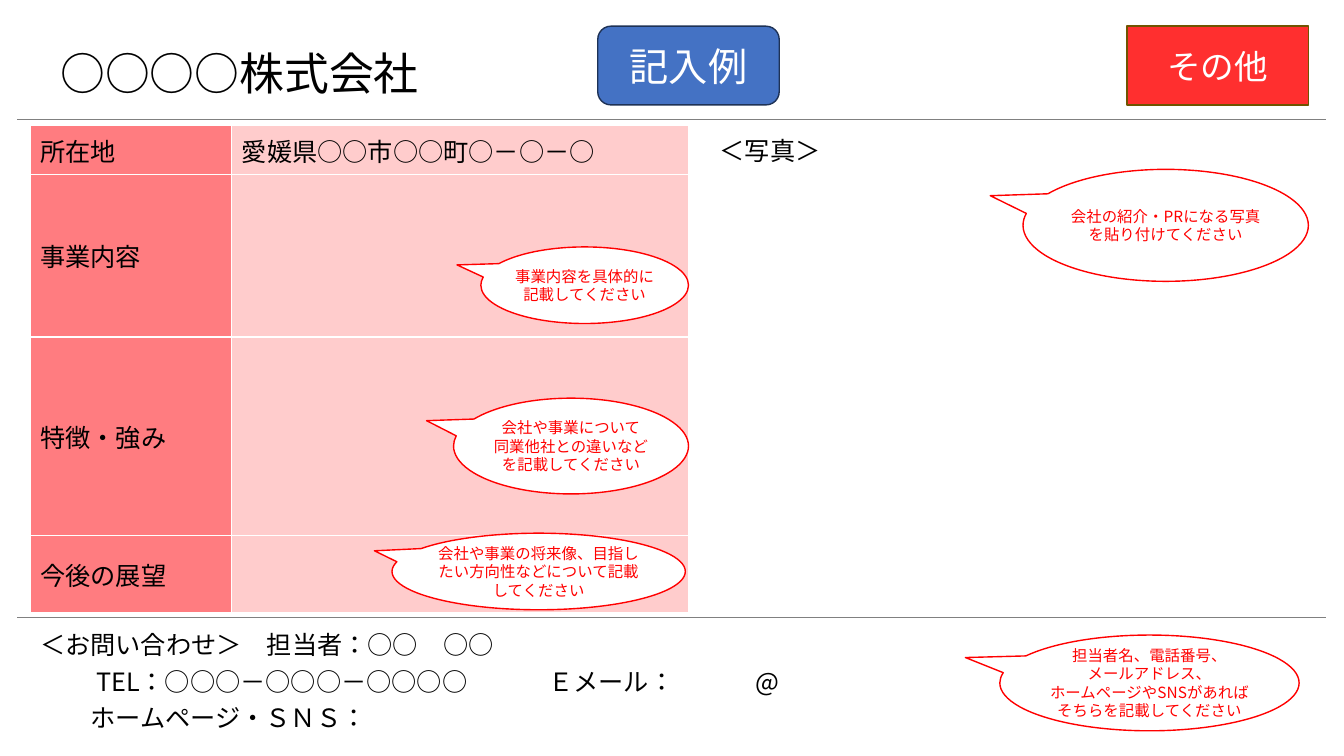
import pptx
import pptx.dml.color
import pptx.enum.lang
import pptx.enum.shapes
import pptx.enum.text
import pptx.oxml.ns
import pptx.util
from lxml import etree

Pt = pptx.util.Pt
SHAPE = pptx.enum.shapes.MSO_SHAPE
ALIGN = pptx.enum.text.PP_ALIGN
ANCHOR = pptx.enum.text.MSO_ANCHOR

# Content: frames are left, top, width, height in points
TITLE = ["○○○○株式会社"]
PHOTO = ["＜写真＞"]
CONTACT = [
    "＜お問い合わせ＞　担当者：○○　○○",
    "\tTEL：○○○－○○○－○○○○\tＥメール：\t@",
    "\tホームページ・ＳＮＳ：",
]
CONTACT_TABS = [[], [40, 363, 511], [36]]
PROFILE = [  # label, value, row height
    ("所在地", "愛媛県○○市○○町○－○－○", 35.3),
    ("事業内容", "", 116),
    ("特徴・強み", "", 142),
    ("今後の展望", "", 54.7),
]
TAGS = [  # text, left, preset, fill, line, size
    ("記入例", 427, SHAPE.ROUNDED_RECTANGLE, "blue", "navy", "tag_large"),
    ("その他", 805, SHAPE.RECTANGLE, "red", "brown", "tag"),
]
CALLOUTS = [  # lines, frame, pointer tip
    (["事業内容を具体的に", "記載してください"],
     (343.5, 176.4, 148.3, 54.7), (-0.615, -0.265)),
    (["会社や事業について", "同業他社との違いなど", "を記載してください"],
     (324, 284.4, 167.8, 68.4), (-0.615, -0.265)),
    (["会社や事業の将来像、目指したい方向性などについて記載してください"],
     (280, 380.9, 209.5, 54.7), (-0.56, -0.27)),
    (["会社の紹介・PRになる写真を貼り付けてください"],
     (730.8, 121, 203.8, 80), (-0.615, -0.265)),
    (["担当者名、電話番号、", "メールアドレス、",
      "ホームページやSNSがあればそちらを記載してください"],
     (714.2, 453.6, 213.8, 68.4), (-0.615, -0.265)),
]

# Theme and layout
THEME = {
    "font": "Noto Sans CJK JP",
    "size": {"title": 32, "tag_large": 28, "tag": 24, "body": 18, "note": 11},
    "color": {
        "black": "000000", "white": "FFFFFF", "rule": "808080",
        "label": "FF7C80", "value": "FFCCCC", "note": "FF0000",
        "blue": "4472C4", "navy": "1E3256", "red": "FF2F2F", "brown": "705400",
    },
}
PAGE_SIZE = (960, 540)
RULE_X = (12.2, 947.5)
RULE_YS = (85.5, 440.8)
TABLE_ORIGIN = (21.6, 89.5)
COLUMNS = (144, 326.2)
TAG_TOP, TAG_WIDTH, TAG_HEIGHT = 18.7, 129.6, 56.2


def rgb(name):
    return pptx.dml.color.RGBColor.from_string(THEME["color"][name])


def add_xml(parent, tag, **attributes):
    return etree.SubElement(parent, pptx.oxml.ns.qn(tag), attributes)


def write(frame, lines, size, color="black", align=None, spacing=None, tabs=None):
    for index, line in enumerate(lines):
        para = frame.paragraphs[0] if index == 0 else frame.add_paragraph()
        if tabs and tabs[index]:
            stops = add_xml(para._p.get_or_add_pPr(), "a:tabLst")
            for stop in tabs[index]:
                add_xml(stops, "a:tab", pos=str(Pt(stop)), algn="l")
        if align is not None:
            para.alignment = align
        if spacing:
            para.line_spacing = spacing
        span = para.add_run()
        span.text = line
        span.font.size = Pt(THEME["size"][size])
        span.font.color.rgb = rgb(color)
        span.font.name = THEME["font"]
        span.font.language_id = pptx.enum.lang.MSO_LANGUAGE_ID.JAPANESE
        add_xml(span.font._element, "a:ea", typeface=THEME["font"])


def add_text(page, bounds, lines, size, anchor=ANCHOR.TOP, **style):
    box = page.shapes.add_textbox(*map(Pt, bounds))
    box.text_frame.word_wrap = True
    box.text_frame.vertical_anchor = anchor
    write(box.text_frame, lines, size, **style)


def add_panel(page, preset, bounds, fill, line, lines, size, color):
    panel = page.shapes.add_shape(preset, *map(Pt, bounds))
    panel.shadow.inherit = False
    panel.fill.solid()
    panel.fill.fore_color.rgb = rgb(fill)
    panel.line.color.rgb = rgb(line)
    panel.line.width = Pt(1)
    panel.text_frame.word_wrap = True
    panel.text_frame.vertical_anchor = ANCHOR.MIDDLE
    write(panel.text_frame, lines, size, color, ALIGN.CENTER)
    return panel


def add_rule(page, y):
    rule = page.shapes.add_connector(
        pptx.enum.shapes.MSO_CONNECTOR.STRAIGHT,
        Pt(RULE_X[0]), Pt(y), Pt(RULE_X[1]), Pt(y))
    rule.line.color.rgb = rgb("rule")
    rule.line.width = Pt(0.5)
    add_xml(rule._element.spPr, "a:effectLst")


def fill_cell(cell, text, fill):
    properties = cell._tc.get_or_add_tcPr()
    for side in ("a:lnL", "a:lnR", "a:lnT", "a:lnB"):
        border = add_xml(properties, side, w=str(Pt(1)))
        add_xml(add_xml(border, "a:solidFill"), "a:srgbClr",
                val=THEME["color"]["white"])
    cell.fill.solid()
    cell.fill.fore_color.rgb = rgb(fill)
    cell.vertical_anchor = ANCHOR.MIDDLE
    if text:
        write(cell.text_frame, [text], "body")


def add_profile(page):
    heights = [row[2] for row in PROFILE]
    table = page.shapes.add_table(
        len(PROFILE), len(COLUMNS), *map(Pt, TABLE_ORIGIN),
        Pt(sum(COLUMNS)), Pt(sum(heights))).table
    table.first_row = table.horz_banding = False
    for column, width in zip(table.columns, COLUMNS):
        column.width = Pt(width)
    for index, (label, value, height) in enumerate(PROFILE):
        table.rows[index].height = Pt(height)
        fill_cell(table.cell(index, 0), label, "label")
        fill_cell(table.cell(index, 1), value, "value")


def main():
    deck = pptx.Presentation()
    deck.slide_width, deck.slide_height = map(Pt, PAGE_SIZE)
    page = deck.slides.add_slide(deck.slide_layouts[6])

    # Heading, rules and contact details
    add_text(page, (36, 18.7, 380, 70.6), TITLE, "title",
             anchor=ANCHOR.MIDDLE, spacing=0.9)
    for y in RULE_YS:
        add_rule(page, y)
    add_text(page, (21.6, 442, 913, 84.2), CONTACT, "body",
             spacing=1.2, tabs=CONTACT_TABS)

    # Company profile and photo area
    add_profile(page)
    add_text(page, (507, 88.6, 139.7, 31.7), PHOTO, "body", spacing=1.2)

    # Tags
    for text, left, preset, fill, line, size in TAGS:
        add_panel(page, preset, (left, TAG_TOP, TAG_WIDTH, TAG_HEIGHT),
                  fill, line, [text], size, "white")

    # Callouts
    for lines, bounds, tip in CALLOUTS:
        callout = add_panel(page, SHAPE.OVAL_CALLOUT, bounds, "white", "note",
                            lines, "note", "note")
        callout.adjustments[0], callout.adjustments[1] = tip
        frame = callout.text_frame
        frame.margin_left = frame.margin_right = Pt(0)
        frame.margin_top = frame.margin_bottom = Pt(0)

    deck.save("out.pptx")


if __name__ == "__main__":
    main()
